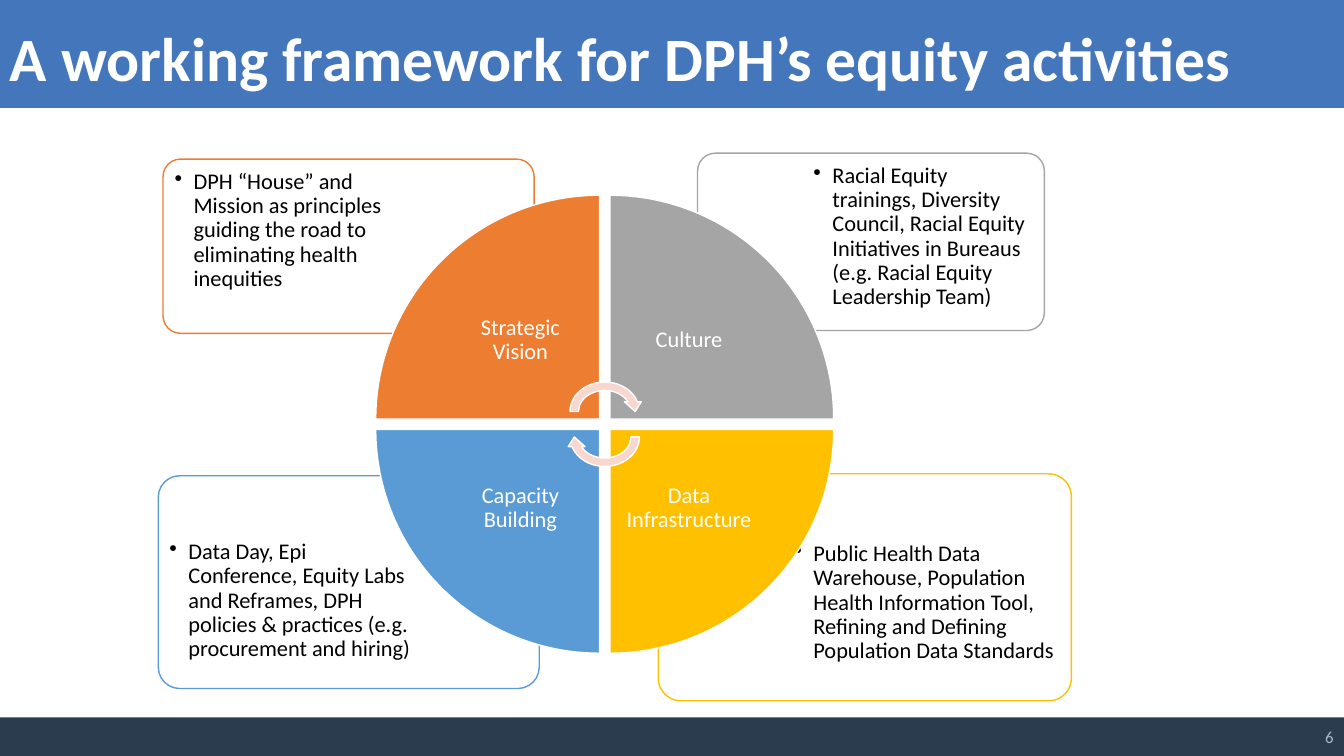
from lxml import etree
from pptx import Presentation
from pptx.dml.color import RGBColor
from pptx.enum.shapes import MSO_SHAPE
from pptx.enum.text import MSO_ANCHOR, PP_ALIGN
from pptx.oxml.ns import qn
from pptx.util import Cm, Pt

RECT, ROUND_RECT = MSO_SHAPE.RECTANGLE, MSO_SHAPE.ROUNDED_RECTANGLE
WEDGE, ARROW = MSO_SHAPE.PIE_WEDGE, MSO_SHAPE.CIRCULAR_ARROW
TOP, MIDDLE = MSO_ANCHOR.TOP, MSO_ANCHOR.MIDDLE
LEFT, CENTER, RIGHT = PP_ALIGN.LEFT, PP_ALIGN.CENTER, PP_ALIGN.RIGHT

WHITE = RGBColor(0xFF, 0xFF, 0xFF)
BLACK = RGBColor(0x00, 0x00, 0x00)
HEADER = RGBColor(0x43, 0x76, 0xBB)
FOOTER = RGBColor(0x2A, 0x3C, 0x4E)
PAGE_NUMBER = RGBColor(0xAD, 0xB9, 0xCA)
PINK = RGBColor(0xF8, 0xD7, 0xCE)
ORANGE = RGBColor(0xED, 0x7D, 0x31)
GRAY = RGBColor(0xA5, 0xA5, 0xA5)
YELLOW = RGBColor(0xFF, 0xC0, 0x00)
BLUE = RGBColor(0x5B, 0x9B, 0xD5)

# Slide and wheel geometry in centimetres
WIDTH, HEIGHT = 33.87, 19.05
CENTER_X, CENTER_Y = 15.24, 10.69
HALF_GAP, RADIUS, LABEL = 0.13, 5.64, 3.99
ARROW_W, ARROW_H, ARROW_SHIFT = 1.96, 1.7, 0.32
INDENT = 0.48

# Cards: colour, box, text box, text
CARDS = [
    (YELLOW, (16.59, 11.94, 10.41, 5.72), (19.84, 13.49, 7.04, 4.04),
     "Public Health Data Warehouse, Population Health Information Tool, "
     "Refining and Defining Population Data Standards"),
    (BLUE, (3.99, 11.99, 9.6, 5.36), (4.09, 13.44, 6.48, 3.78),
     "Data Day, Epi Conference, Equity Labs and Reframes, "
     "DPH policies & practices (e.g. procurement and hiring)"),
    (GRAY, (17.58, 3.86, 8.74, 4.47), (20.32, 3.96, 5.92, 3.15),
     "Racial Equity trainings, Diversity Council, Racial Equity Initiatives "
     "in Bureaus (e.g. Racial Equity Leadership Team)"),
    (ORANGE, (4.11, 4.01, 9.35, 4.39), (4.22, 4.11, 6.35, 3.1),
     "DPH “House” and Mission as principles guiding the road to "
     "eliminating health inequities"),
]

# Quadrants clockwise from top left: label, colour, right side?, bottom side?
QUADRANTS = [
    ("Strategic Vision", ORANGE, False, False),
    ("Culture", GRAY, True, False),
    ("Data Infrastructure", YELLOW, True, True),
    ("Capacity Building", BLUE, False, True),
]


def add_shape(s, kind, box, fill, line=None, rotation=0):
    sp = s.shapes.add_shape(kind, *map(Cm, box))
    sp.shadow.inherit = False
    sp.fill.solid()
    sp.fill.fore_color.rgb = fill
    if line is None:
        sp.line.fill.background()
    else:
        sp.line.color.rgb = line
        sp.line.width = Pt(1)
    sp.rotation = rotation
    return sp


def add_text(s, text, box, size=16, color=BLACK, bold=False, align=LEFT,
             anchor=TOP, margins=(0.25, 0.13), spacing=0.9, bullet=False):
    tf = s.shapes.add_textbox(*map(Cm, box)).text_frame
    tf.word_wrap = True
    tf.vertical_anchor = anchor
    tf.margin_left = tf.margin_right = Cm(margins[0])
    tf.margin_top = tf.margin_bottom = Cm(margins[1])
    p = tf.paragraphs[0]
    p.alignment = align
    p.line_spacing = spacing
    r = p.add_run()
    r.text = text
    r.font.name = "Calibri"
    r.font.size = Pt(size)
    r.font.bold = bold
    r.font.color.rgb = color
    if bullet:
        p_pr = p._p.get_or_add_pPr()
        p_pr.set("marL", str(Cm(INDENT)))
        p_pr.set("indent", str(-Cm(INDENT)))
        etree.SubElement(p_pr, qn("a:buChar")).set("char", "•")


def add_card(s, color, box, text_box, text):
    sp = add_shape(s, ROUND_RECT, box, WHITE, color)
    sp.adjustments[0] = 0.1
    add_text(s, text, text_box, margins=(0.18, 0.18), bullet=True)


def quadrant_box(size, right, bottom):
    x = CENTER_X + (HALF_GAP if right else -HALF_GAP - size)
    y = CENTER_Y + (HALF_GAP if bottom else -HALF_GAP - size)
    return x, y, size, size


def add_quadrant(s, index, label, color, right, bottom):
    add_shape(s, WEDGE, quadrant_box(RADIUS, right, bottom), color, WHITE,
              rotation=90 * index)
    add_text(s, label, quadrant_box(LABEL, right, bottom), color=WHITE,
             align=CENTER, anchor=MIDDLE, margins=(0.3, 0.3))


def add_cycle_arrow(s, shift, rotation):
    box = (CENTER_X - ARROW_W / 2, CENTER_Y - ARROW_H / 2 + shift,
           ARROW_W, ARROW_H)
    add_shape(s, ARROW, box, PINK, WHITE, rotation)


def main():
    prs = Presentation()
    prs.slide_width, prs.slide_height = Cm(WIDTH), Cm(HEIGHT)
    s = prs.slides.add_slide(prs.slide_layouts[6])

    # Header and footer bands, title
    add_shape(s, RECT, (0, 0, WIDTH, 2.72), HEADER)
    add_shape(s, RECT, (0, 18.08, WIDTH, 0.97), FOOTER)
    add_text(s, "A working framework for DPH’s equity activities",
             (0, 0.58, WIDTH, 2.74), size=44, color=WHITE, bold=True)

    # Cards lie behind the wheel
    for card in CARDS:
        add_card(s, *card)
    for index, quadrant in enumerate(QUADRANTS):
        add_quadrant(s, index, *quadrant)

    # Cycle arrows at the hub
    add_cycle_arrow(s, -ARROW_SHIFT, 0)
    add_cycle_arrow(s, ARROW_SHIFT, 180)

    # Slide number
    add_text(s, "6", (26.26, 18.06, 7.6, 1.02), size=12, color=PAGE_NUMBER,
             align=RIGHT, anchor=MIDDLE, spacing=1.0)

    prs.save("out.pptx")


if __name__ == "__main__":
    main()
